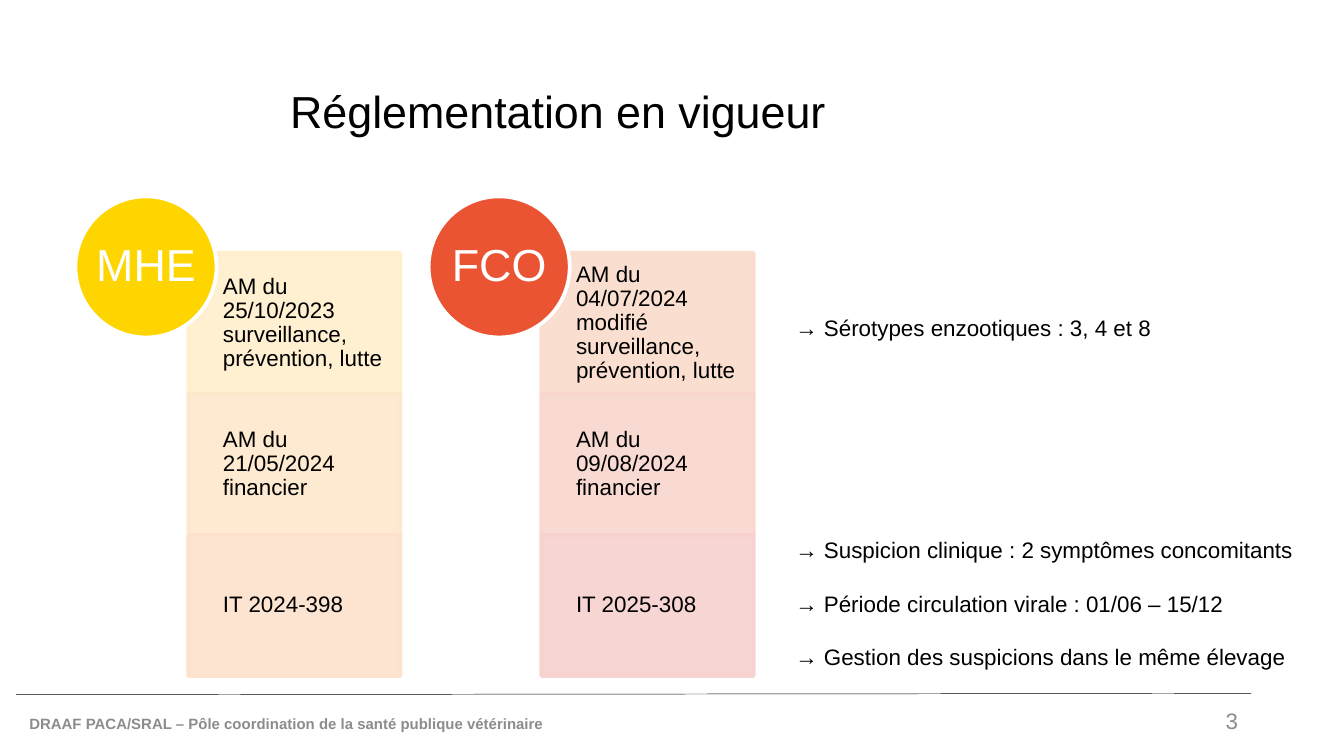
from lxml import etree
from pptx import Presentation, util as u
from pptx.dml.color import RGBColor
from pptx.enum import shapes, text
from pptx.oxml.ns import qn

Pt = u.Pt
FONT = "Arial"
COLORS = {"black": "000000", "white": "FFFFFF", "grey": "8C8C8C"}
TITLE = "Réglementation en vigueur"
FOOTER = "DRAAF PACA/SRAL – Pôle coordination de la santé publique vétérinaire"
PAGE = "3"
DISEASES = [
    ("MHE", "FFD500", [
        ("AM du 25/10/2023 surveillance, prévention, lutte", "FFEFCC"),
        ("AM du 21/05/2024 financier", "FEE8CC"),
        ("IT 2024-398", "FCE2CD"),
    ]),
    ("FCO", "EA5433", [
        ("AM du 04/07/2024 modifié surveillance, prévention, lutte", "FADCCD"),
        ("AM du 09/08/2024 financier", "F9D6CE"),
        ("IT 2025-308", "F7D1CE"),
    ]),
]
SEROTYPES = ("→ Sérotypes enzootiques : 3, 4 et 8", 216.7)
SUSPICIONS = [
    ("→ Suspicion clinique : 2 symptômes concomitants", 286.6),
    ("→ Période circulation virale : 01/06 – 15/12", 268.6),
    ("→ Gestion des suspicions dans le même élevage", 300),
]

GROUP_X, GROUP_STEP = 40.4, 189.2
CIRCLE_Y, BLOCK = 105.2, 75.6
CARD_DX, CARD_Y, CARD_W, CARD_INDENT = 60.4, 135.4, 113.8, 18.6
NOTE_X, NOTE_H, NOTE_STEP = 419, 21.6, 28.8


def write(sp, words, size, color, align=text.PP_ALIGN.LEFT, bold=False,
          spacing=1.0, insets=(7.2, 3.6, 7.2, 3.6), wrap=True,
          anchor=text.MSO_ANCHOR.MIDDLE):
    tf = sp.text_frame
    tf.word_wrap = wrap
    tf.vertical_anchor = anchor
    tf.margin_left, tf.margin_top, tf.margin_right, tf.margin_bottom = map(Pt, insets)
    p = tf.paragraphs[0]
    p.alignment = align
    p.line_spacing = spacing
    r = p.add_run()
    r.text = words
    r.font.name = FONT
    r.font.size = Pt(size)
    r.font.bold = bold
    r.font.color.rgb = RGBColor.from_string(color)


def add_text(s, box, words, size, color, **style):
    write(s.shapes.add_textbox(*map(Pt, box)), words, size, color, **style)


def add_block(s, kind, box, fill, line):
    sp = s.shapes.add_shape(kind, *map(Pt, box))
    sp.shadow.inherit = False
    sp.fill.solid()
    sp.fill.fore_color.rgb = RGBColor.from_string(fill)
    sp.line.color.rgb = RGBColor.from_string(line)
    sp.line.width = Pt(2)
    return sp


def set_alpha(sp, percent):
    for color in sp._element.spPr.iter(qn("a:srgbClr")):
        etree.SubElement(color, qn("a:alpha")).set("val", str(percent * 1000))


def add_disease(s, x, name, color, cards):
    for row, (words, fill) in enumerate(cards):
        box = (x + CARD_DX, CARD_Y + row * BLOCK, CARD_W, BLOCK)
        card = add_block(s, shapes.MSO_SHAPE.RECTANGLE, box, fill, fill)
        set_alpha(card, 90)
        write(card, words, 12, COLORS["black"], spacing=0.9,
              insets=(CARD_INDENT, 6.5, 6.5, 6.5))
    circle = add_block(s, shapes.MSO_SHAPE.OVAL, (x, CIRCLE_Y, BLOCK, BLOCK),
                       color, COLORS["white"])
    write(circle, name, 24, COLORS["white"], align=text.PP_ALIGN.CENTER,
          spacing=0.9, insets=(0, 0, 0, 0), wrap=False)


def add_note(s, y, words, width):
    add_text(s, (NOTE_X, y, width, NOTE_H), words, 12, COLORS["black"],
             wrap=False, anchor=text.MSO_ANCHOR.TOP)


def main():
    prs = Presentation()
    prs.slide_width, prs.slide_height = Pt(720), Pt(405)
    s = prs.slides.add_slide(prs.slide_layouts[6])

    rule = s.shapes.add_connector(shapes.MSO_CONNECTOR.STRAIGHT,
                                  Pt(8.6), Pt(372.2), Pt(670.3), Pt(371.5))
    rule.line.color.rgb = RGBColor.from_string(COLORS["black"])
    rule.line.width = Pt(0.25)
    etree.SubElement(rule._element.spPr, qn("a:effectLst"))

    add_text(s, (8.6, 376.6, 346.3, 21.6), FOOTER, 8, COLORS["grey"], bold=True)
    add_text(s, (625.7, 375.1, 44.6, 21.6), PAGE, 12, COLORS["grey"],
             align=text.PP_ALIGN.RIGHT)
    add_text(s, (148.3, 21.6, 522, 78.5), TITLE, 24, COLORS["black"], spacing=0.9)

    for i, disease in enumerate(DISEASES):
        add_disease(s, GROUP_X + i * GROUP_STEP, *disease)

    add_note(s, 165, *SEROTYPES)
    for i, note in enumerate(SUSPICIONS):
        add_note(s, 283.7 + i * NOTE_STEP, *note)

    prs.save("out.pptx")


if __name__ == "__main__":
    main()
